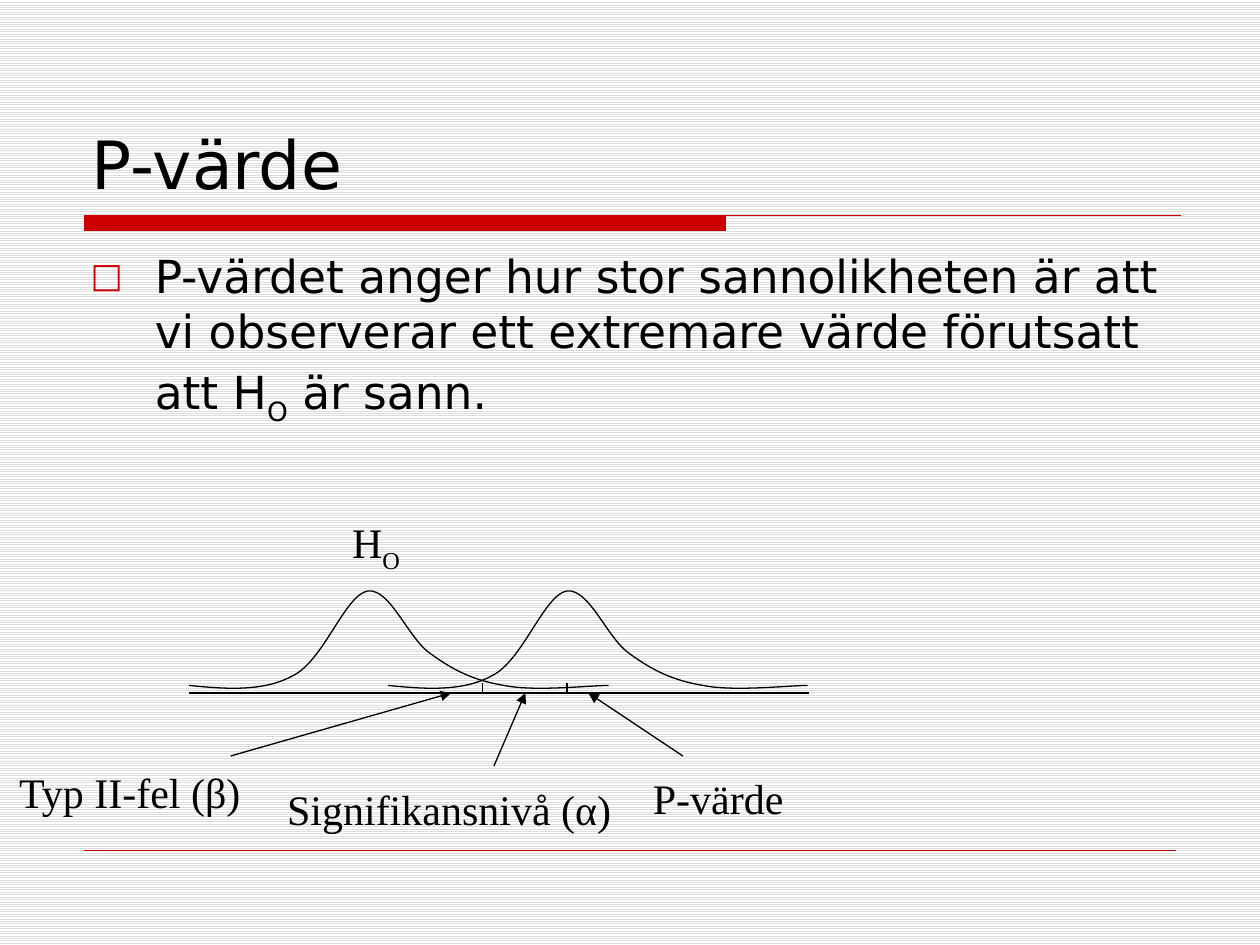
from copy import deepcopy

from lxml import etree
from pptx import Presentation
from pptx.dml.color import RGBColor
from pptx.enum.dml import MSO_PATTERN
from pptx.enum.shapes import MSO_CONNECTOR
from pptx.enum.text import MSO_ANCHOR, MSO_AUTO_SIZE, PP_ALIGN
from pptx.oxml.ns import qn
from pptx.util import Inches, Pt

STRAIGHT = MSO_CONNECTOR.STRAIGHT
STRIPES = MSO_PATTERN.LIGHT_HORIZONTAL
TOP, MIDDLE, BOTTOM = MSO_ANCHOR.TOP, MSO_ANCHOR.MIDDLE, MSO_ANCHOR.BOTTOM
LEFT, CENTER = PP_ALIGN.LEFT, PP_ALIGN.CENTER
GROW, FIXED = MSO_AUTO_SIZE.SHAPE_TO_FIT_TEXT, MSO_AUTO_SIZE.NONE

COLORS = {"ink": "000000", "red": "CC0000", "stripe": "DDDDDD", "paper": "FFFFFF"}
SANS = {"name": "DejaVu Sans"}
SERIF = {"name": "Times New Roman", "size": Pt(24)}

# Bell curve: start point, then three points for each cubic segment
BELL = [
    (0, 5.44),
    (0.3, 5.47), (0.6, 5.49), (0.83, 5.36),
    (1.07, 5.24), (1.24, 4.72), (1.42, 4.69),
    (1.6, 4.67), (1.74, 5.07), (1.92, 5.19),
    (2.1, 5.32), (2.26, 5.4), (2.5, 5.44),
    (2.74, 5.49), (3.19, 5.44), (3.33, 5.44),
]
AXIS = 5.5


def color(name):
    return RGBColor.from_string(COLORS[name])


def scale(points):
    return [(Inches(x), Inches(y)) for x, y in points]


class Deck:
    def __init__(self):
        self.prs = Presentation()
        self.prs.slide_width, self.prs.slide_height = Inches(10), Inches(7.5)
        self.slide = self.prs.slides.add_slide(self.prs.slide_layouts[6])
        self.shapes = self.slide.shapes

    def backdrop(self):
        fill = self.slide.background.fill
        fill.patterned()
        fill.pattern = STRIPES
        fill.fore_color.rgb = color("stripe")
        fill.back_color.rgb = color("paper")

    def finish(self, pen, tint):
        shape = pen.convert_to_shape()
        shape.shadow.inherit = False
        shape.line.color.rgb = color(tint)
        shape.line.width = Pt(0.75)
        return shape, next(shape._element.iter(qn("a:path")))

    def banner(self, x, y, w, h, end):
        """A filled bar whose top edge runs on as a thin rule."""
        rect = scale([(x, y), (x + w, y), (x + w, y + h), (x, y + h)])
        pen = self.shapes.build_freeform(*rect[0])
        pen.add_line_segments(rect[1:], close=True)
        pen.move_to(*rect[0])
        pen.add_line_segments(scale([(end, y)]), close=False)
        shape, bar = self.finish(pen, "red")
        shape.fill.solid()
        shape.fill.fore_color.rgb = color("red")
        # Bar without outline, rule without fill
        rule = deepcopy(bar)
        bar.addnext(rule)
        bar.set("stroke", "0")
        rule.set("fill", "none")
        for part in list(bar)[-2:]:
            bar.remove(part)
        for part in list(rule)[:-2]:
            rule.remove(part)

    def line(self, x1, y1, x2, y2, tint="ink", width=0.75, arrow=False):
        line = self.shapes.add_connector(STRAIGHT, *map(Inches, (x1, y1, x2, y2)))
        line.line.color.rgb = color(tint)
        line.line.width = Pt(width)
        if arrow:
            etree.SubElement(line.line._get_or_add_ln(), qn("a:tailEnd"), type="triangle")
        etree.SubElement(line._element.spPr, qn("a:effectLst"))

    def curve(self, x):
        points = scale([(x + dx, y) for dx, y in BELL])
        pen = self.shapes.build_freeform(*points[0])
        pen.add_line_segments(points[1:], close=False)
        shape, trace = self.finish(pen, "ink")
        shape.fill.background()
        # Each three points become one cubic segment
        legs = trace.findall(qn("a:lnTo"))
        for i in range(0, len(legs), 3):
            cubic = etree.SubElement(trace, qn("a:cubicBezTo"))
            for leg in legs[i:i + 3]:
                cubic.append(leg[0])
                trace.remove(leg)

    def text(self, x, y, w, h, runs, style, anchor=MIDDLE, align=CENTER,
             wrap=True, size=FIXED):
        """Each run is a pair: its text and the format values it changes."""
        box = self.shapes.add_textbox(*map(Inches, (x, y, w, h)))
        frame = box.text_frame
        frame.word_wrap, frame.vertical_anchor = wrap, anchor
        frame.auto_size = size
        para = frame.paragraphs[0]
        para.alignment = align
        for words, change in runs:
            run = para.add_run()
            run.text = words
            run.font.color.rgb = color("ink")
            for key, value in {**style, **change}.items():
                if key == "sub":
                    run._r.get_or_add_rPr().set("baseline", "-25000")
                else:
                    setattr(run.font, key, value)
        return para

    def bullet(self, para, mark, indent):
        props = para._p.get_or_add_pPr()
        props.set("marL", str(Inches(indent)))
        props.set("indent", str(-Inches(indent)))
        tint = etree.SubElement(props, qn("a:buClr"))
        etree.SubElement(tint, qn("a:srgbClr"), val=COLORS["red"])
        etree.SubElement(props, qn("a:buSzPct"), val="75000")
        etree.SubElement(props, qn("a:buFont"), typeface=SANS["name"])
        etree.SubElement(props, qn("a:buChar"), char=mark)


def main():
    deck = Deck()
    deck.backdrop()

    # Rules around the content
    deck.banner(0.67, 1.71, 5.09, 0.12, 9.37)
    deck.line(0.67, 6.75, 9.33, 6.75, "red", 0.25)

    # Title and body
    deck.text(0.63, 0.33, 8.75, 1.33, [("P-värde", {})], {**SANS, "size": Pt(38)},
              BOTTOM, LEFT)
    body = [("P-värdet anger hur stor sannolikheten är att vi observerar "
             "ett extremare värde förutsatt att H", {}),
            ("O", {"sub": True}), (" är sann.", {}), (" ", {"size": Pt(30)})]
    para = deck.text(0.62, 1.92, 8.75, 4.67, body, {**SANS, "size": Pt(26)}, TOP, LEFT)
    deck.bullet(para, "□", 0.51)

    # Two bell curves on one axis with tick marks
    for x in (1.5, 3.08):
        deck.curve(x)
    deck.line(1.5, AXIS, 6.42, AXIS)
    for x in (3.83, 4.5):
        deck.line(x, 5.42, x, AXIS)

    # Arrows from the labels to the axis
    for x, y, tip in ((1.83, 6, 3.58), (3.92, 6.08, 4.17), (5.42, 6, 4.67)):
        deck.line(x, y, tip, AXIS, arrow=True)

    # Labels
    deck.text(2.67, 4.08, 0.63, 0.5, [("H", {}), ("O", {"sub": True})], SERIF, size=GROW)
    for x, y, w, words in ((0.04, 6.03, 1.98, "Typ II-fel (β)"),
                           (2.18, 6.17, 2.77, "Signifikansnivå (α)"),
                           (5.08, 6.08, 1.24, "P-värde")):
        deck.text(x, y, w, 0.5, [(words, {})], SERIF, wrap=False, size=GROW)

    deck.prs.save("out.pptx")


if __name__ == "__main__":
    main()
